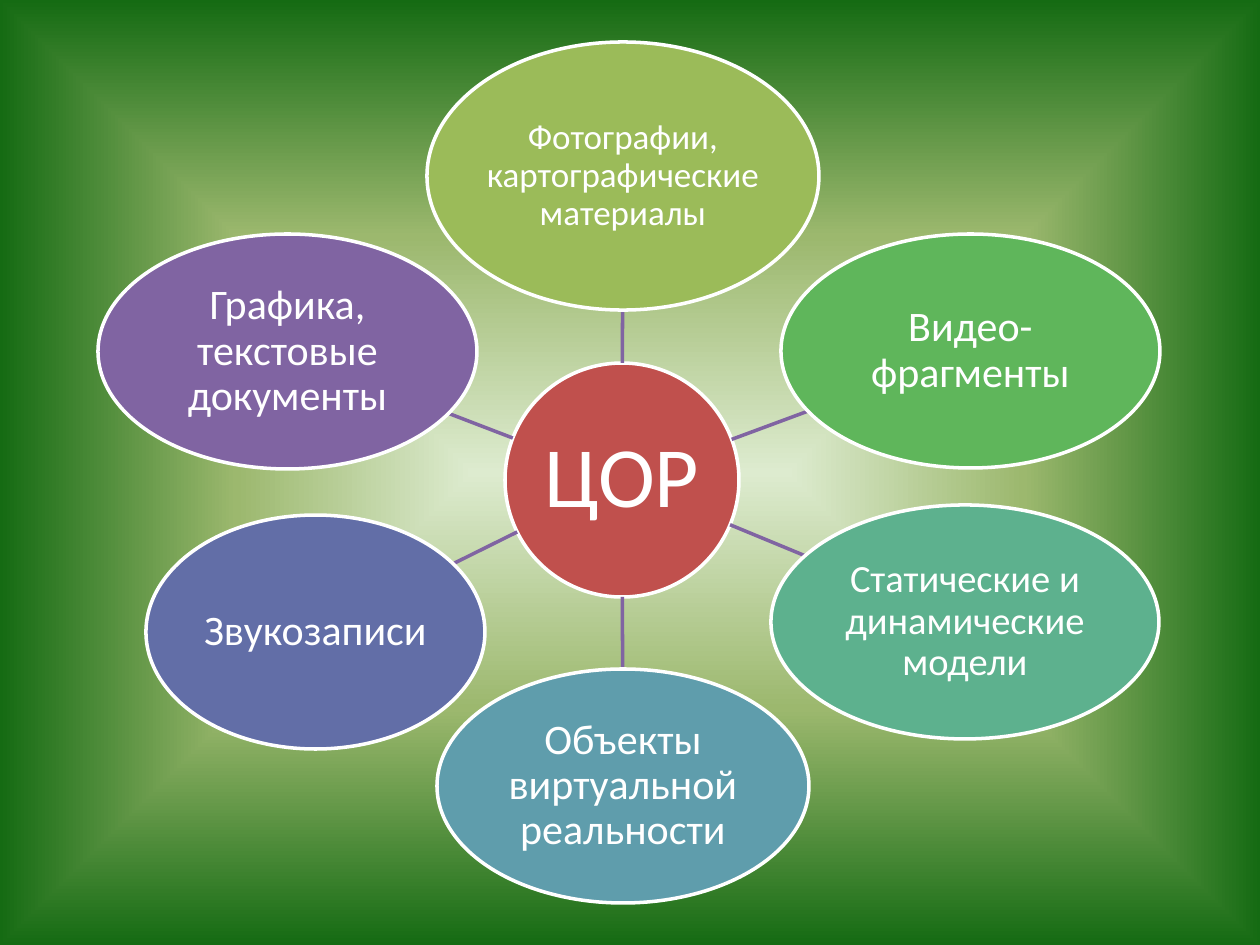
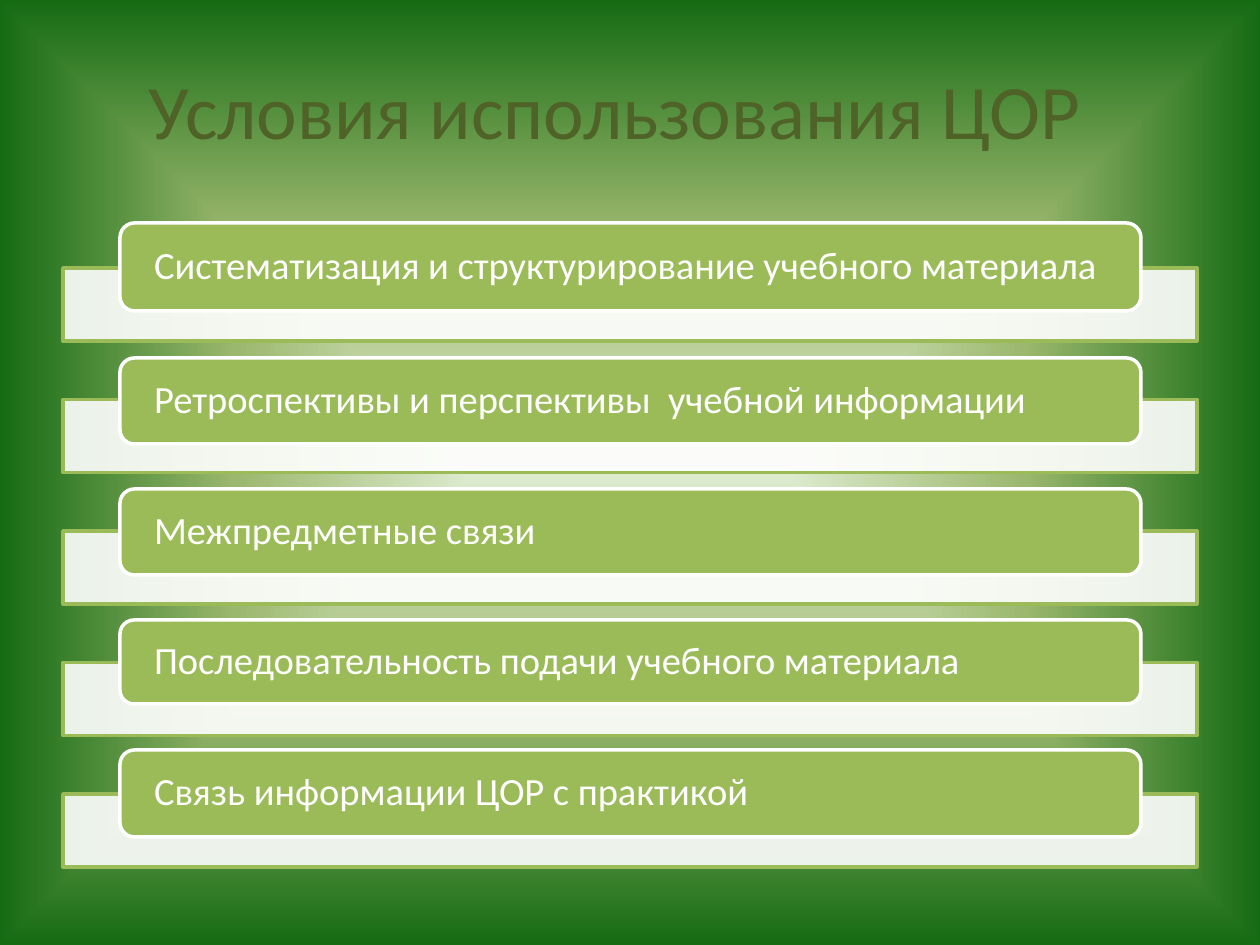
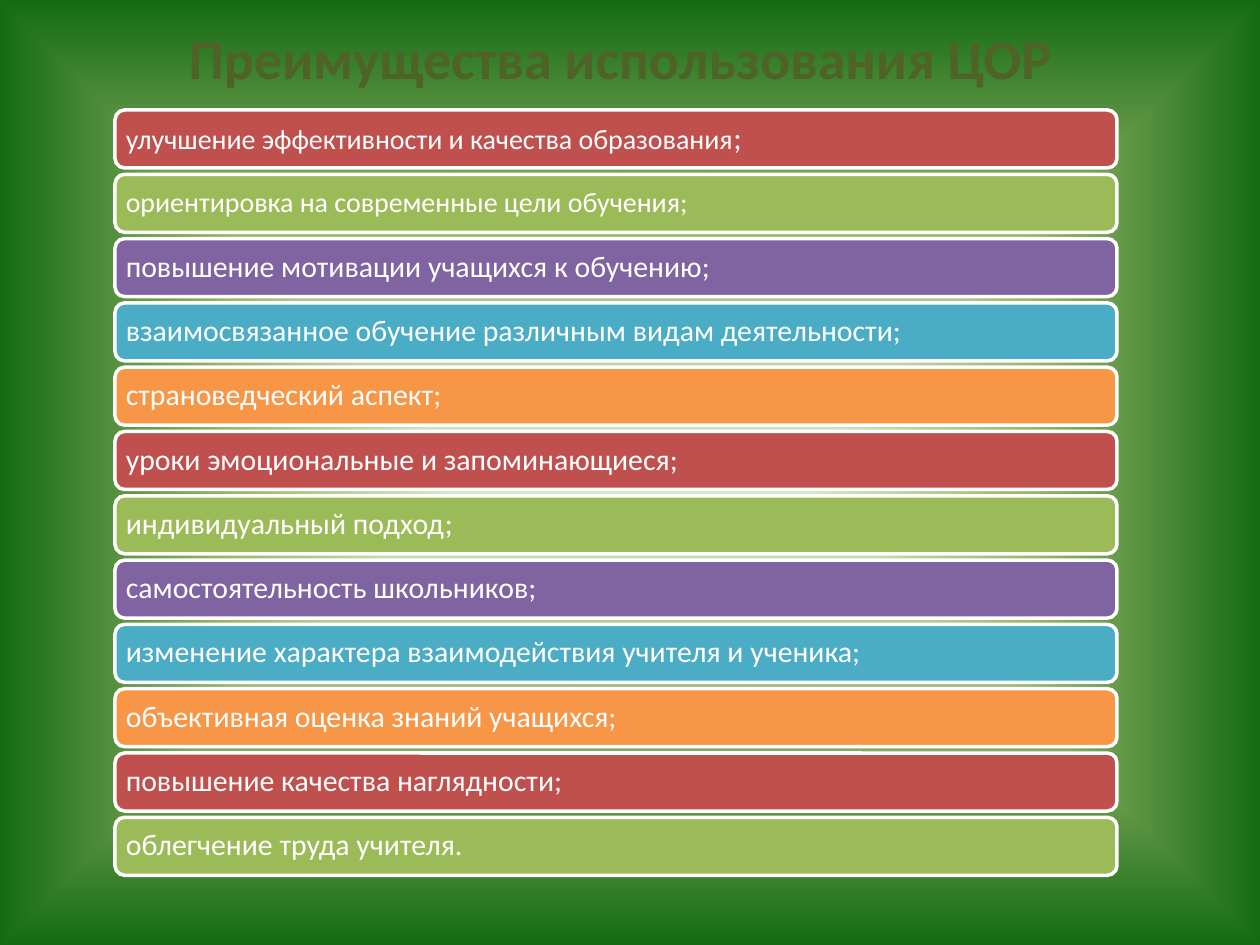
from dataclasses import dataclass
from math import hypot

from pptx import Presentation
from pptx.dml.color import RGBColor
from pptx.enum.shapes import MSO_CONNECTOR as CONN, MSO_SHAPE as SHAPE
from pptx.enum.text import MSO_ANCHOR as ANCHOR, PP_ALIGN as ALIGN
from pptx.oxml import parse_xml
from pptx.oxml.ns import nsdecls, qn
from pptx.util import Emu, Pt

PX = 914400 / 126


@dataclass(frozen=True)
class Theme:
    font: str = "Calibri"
    white: str = "FFFFFF"
    title: str = "4F6228"
    red: str = "C0504D"
    lime: str = "9BBB59"
    purple: str = "8064A2"
    aqua: str = "4BACC6"
    orange: str = "F79646"
    green: str = "5FB65B"
    mint: str = "5DB18E"
    teal: str = "5F9DAC"
    indigo: str = "626EA7"
    backdrop: tuple = ((0, "DDEBCF"), (50, "9CB86E"), (100, "156B13"))
    line: int = 2
    hub_size: int = 49
    title_size: int = 44
    small_title_size: int = 32
    card_size: int = 22
    row_size: int = 17
    small_row_size: int = 16


T = Theme()

HUB = (505, 363, 234, 234)
RESOURCES = [
    ("Фотографии, картографические материалы", (427, 42, 392, 268), T.lime, 20),
    ("Видео-фрагменты", (781, 234, 379, 234), T.green, 24),
    ("Статические и динамические модели", (771, 505, 388, 234), T.mint, 22),
    ("Объекты виртуальной реальности", (437, 669, 372, 234), T.teal, 24),
    ("Звукозаписи", (146, 515, 339, 234), T.indigo, 24),
    ("Графика, текстовые документы", (98, 234, 379, 235), T.purple, 24),
]
CONDITIONS = [
    ("Систематизация и структурирование учебного материала", 223, 88),
    ("Ретроспективы и перспективы  учебной информации", 358, 86),
    ("Межпредметные связи", 489, 86),
    ("Последовательность подачи учебного материала", 620, 84),
    ("Связь информации ЦОР с практикой", 750, 87),
]
BENEFITS = [
    "улучшение эффективности и качества образования",
    "ориентировка на современные цели обучения;",
    "повышение мотивации учащихся к обучению;",
    "взаимосвязанное обучение различным видам деятельности;",
    "страноведческий аспект;",
    "уроки эмоциональные и запоминающиеся;",
    "индивидуальный подход;",
    "самостоятельность школьников;",
    "изменение характера взаимодействия учителя и ученика;",
    "объективная оценка знаний учащихся;",
    "повышение качества наглядности;",
    "облегчение труда учителя.",
]
ROW_COLORS = [T.red, T.lime, T.purple, T.aqua, T.orange]


def px(n):
    return Emu(round(n * PX))


def rgb(value):
    return RGBColor.from_string(value)


def write(p, text, size, color=T.white, bold=False):
    r = p.add_run()
    r.text = text
    r.font.name = T.font
    r.font.size = Pt(size)
    r.font.bold = bold
    r.font.color.rgb = rgb(color)


def add_box(slide, kind, box, fill, line=T.white):
    sp = slide.shapes.add_shape(kind, *map(px, box))
    sp.shadow.inherit = False
    sp.fill.solid()
    sp.fill.fore_color.rgb = rgb(fill)
    sp.line.color.rgb = rgb(line)
    sp.line.width = Pt(T.line)
    return sp


def add_label(sp, text, size, align=ALIGN.LEFT, inset=(2, 2)):
    tf = sp.text_frame
    tf.word_wrap = True
    tf.vertical_anchor = ANCHOR.MIDDLE
    tf.margin_left = tf.margin_right = px(inset[0])
    tf.margin_top = tf.margin_bottom = px(inset[1])
    p = tf.paragraphs[0]
    p.alignment = align
    p.line_spacing = 0.9
    write(p, text, size)
    return p


def add_bubble(slide, box, text, fill, size):
    sp = add_box(slide, SHAPE.OVAL, box, fill)
    add_label(sp, text, size, align=ALIGN.CENTER, inset=(1, 1))


def center(box):
    left, top, width, height = box
    return left + width / 2, top + height / 2


def edge_point(box, target):
    cx, cy = center(box)
    dx, dy = target[0] - cx, target[1] - cy
    scale = 1 / hypot(dx / (box[2] / 2), dy / (box[3] / 2))
    return cx + dx * scale, cy + dy * scale


def add_spoke(slide, start_box, end_box):
    start = edge_point(start_box, center(end_box))
    end = edge_point(end_box, center(start_box))
    line = slide.shapes.add_connector(CONN.STRAIGHT, *map(px, start + end))
    line.line.color.rgb = rgb(T.purple)
    line.line.width = Pt(T.line)
    line._element.spPr.append(parse_xml(f"<a:effectLst {nsdecls('a')}/>"))


def set_title(slide, text, box, size, bold=False):
    sp = slide.shapes.title
    sp.left, sp.top, sp.width, sp.height = map(px, box)
    tf = sp.text_frame
    tf.vertical_anchor = ANCHOR.MIDDLE
    p = tf.paragraphs[0]
    p.alignment = ALIGN.CENTER
    write(p, text, size, color=T.title, bold=bold)


def set_backdrop(master):
    master.background.fill.solid()
    stops = "".join(
        f'<a:gs pos="{pos * 1000}"><a:srgbClr val="{color}"/></a:gs>'
        for pos, color in T.backdrop
    )
    grad = parse_xml(
        f'<a:gradFill {nsdecls("a")} rotWithShape="1"><a:gsLst>{stops}</a:gsLst>'
        '<a:path path="shape"><a:fillToRect l="50000" t="50000" r="50000" b="50000"/>'
        "</a:path></a:gradFill>"
    )
    bg = master.element.find(".//" + qn("p:bgPr"))
    bg.replace(bg[0], grad)


def set_opacity(sp, percent):
    color = sp._element.spPr.find(qn("a:solidFill"))[0]
    color.append(parse_xml(f'<a:alpha {nsdecls("a")} val="{percent * 1000}"/>'))


def build_resources(slide):
    add_bubble(slide, HUB, "ЦОР", T.red, T.hub_size)
    for text, box, fill, size in RESOURCES:
        add_spoke(slide, HUB, box)
        add_bubble(slide, box, text, fill, size)


def build_conditions(slide):
    set_title(slide, "Условия использования ЦОР", (64, 55, 1103, 107), T.title_size)
    for i, (text, top, height) in enumerate(CONDITIONS):
        strip = add_box(slide, SHAPE.RECTANGLE, (63, 268 + 131.5 * i, 1134, 73), T.white, line=T.lime)
        set_opacity(strip, 90)
        card = add_box(slide, SHAPE.ROUNDED_RECTANGLE, (120, top, 1021, height), T.lime)
        add_label(card, text, T.card_size, inset=(30, 0))


def build_benefits(slide):
    set_title(slide, "Преимущества использования ЦОР", (63, 20, 1115, 74),
              T.small_title_size, bold=True)
    for i, text in enumerate(BENEFITS):
        row = add_box(slide, SHAPE.ROUNDED_RECTANGLE, (115, 110 + 64.3 * i, 1002, 58),
                      ROW_COLORS[i % len(ROW_COLORS)])
        size = T.small_row_size if i < 2 else T.row_size
        p = add_label(row, text, size, inset=(8, 8))
        if i == 0:
            write(p, ";", 18)


def main():
    prs = Presentation()
    prs.slide_width, prs.slide_height = px(1260), px(945)
    set_backdrop(prs.slide_master)
    title_only, blank = prs.slide_layouts[5], prs.slide_layouts[6]
    build_resources(prs.slides.add_slide(blank))
    build_conditions(prs.slides.add_slide(title_only))
    build_benefits(prs.slides.add_slide(title_only))
    prs.save("out.pptx")


if __name__ == "__main__":
    main()
